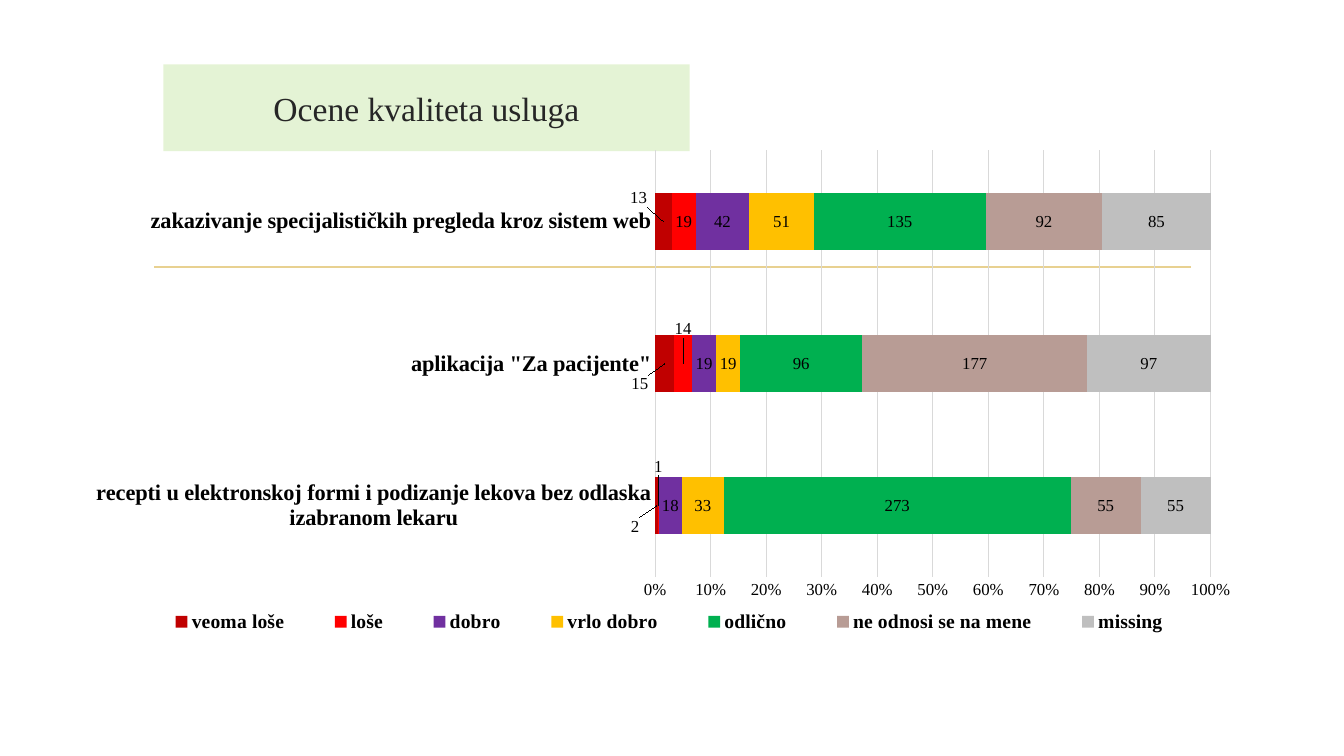
from lxml import etree
from pptx import Presentation
from pptx.chart.data import CategoryChartData
from pptx.dml.color import RGBColor
from pptx.enum.chart import XL_CHART_TYPE, XL_LABEL_POSITION, XL_LEGEND_POSITION, XL_TICK_MARK
from pptx.enum.shapes import MSO_CONNECTOR, MSO_SHAPE
from pptx.enum.text import MSO_ANCHOR, PP_ALIGN
from pptx.oxml.ns import qn
from pptx.util import Inches, Pt

FONT = "Times New Roman"
BLACK, GRID = "000000", "D9D9D9"
WIDTH, HEIGHT = 13.33, 7.5

CATEGORIES = [
    "recepti u elektronskoj formi i podizanje lekova bez odlaska izabranom lekaru",
    'aplikacija "Za pacijente"',
    "zakazivanje specijalističkih pregleda kroz sistem web",
]
RATINGS = [
    ("veoma loše", (2, 15, 13), "C00000"),
    ("loše", (1, 14, 19), "FF0000"),
    ("dobro", (18, 19, 42), "7030A0"),
    ("vrlo dobro", (33, 19, 51), "FFC000"),
    ("odlično", (273, 96, 135), "00B050"),
    ("ne odnosi se na mene", (55, 177, 92), "B89C95"),
    ("missing", (55, 97, 85), "BFBFBF"),
]
# Labels moved off narrow bars: (rating, category) -> shift as shares of the chart
LABEL_SHIFTS = {
    (0, 0): (-0.018, 0.04), (0, 1): (-0.021, 0.04), (0, 2): (-0.021, -0.046),
    (1, 0): (0, -0.077), (1, 1): (0, -0.068),
}


def color(value):
    return RGBColor.from_string(value)


def set_font(font, size, value=BLACK, bold=False):
    formats = {"name": FONT, "size": Pt(size), "bold": bold}
    for name, setting in formats.items():
        setattr(font, name, setting)
    font.color.rgb = color(value)


def set_line(line, value, width):
    line.color.rgb = color(value)
    line.width = Pt(width)


def add_layout(parent, index, **settings):
    """Place a chart part by hand, in shares of the chart's size."""
    for old in parent.findall(qn("c:layout")):
        parent.remove(old)
    layout = etree.Element(qn("c:layout"))
    manual = etree.SubElement(layout, qn("c:manualLayout"))
    for name, value in settings.items():
        etree.SubElement(manual, qn(f"c:{name}")).set("val", str(value))
    parent.insert(index, layout)


def add_divider(slide, left, right, top):
    line = slide.shapes.add_connector(
        MSO_CONNECTOR.STRAIGHT, Inches(left), Inches(top), Inches(right), Inches(top))
    set_line(line.line, "E8D191", 1.25)
    etree.SubElement(line._element.spPr, qn("a:effectLst"))


def add_title(slide, text, *box):
    shape = slide.shapes.add_shape(MSO_SHAPE.RECTANGLE, *map(Inches, box))
    shape.shadow.inherit = False
    shape.line.fill.background()
    shape.fill.solid()
    shape.fill.fore_color.rgb = color("92D050")
    tint = shape._element.spPr.find(qn("a:solidFill"))[0]
    etree.SubElement(tint, qn("a:alpha")).set("val", "24000")
    shape.text_frame.vertical_anchor = MSO_ANCHOR.MIDDLE
    paragraph = shape.text_frame.paragraphs[0]
    paragraph.text = text
    paragraph.alignment = PP_ALIGN.CENTER
    set_font(paragraph.font, 24, "262626")


def format_axes(chart):
    category_axis, value_axis = chart.category_axis, chart.value_axis
    for axis, size, bold in ((category_axis, 16, True), (value_axis, 12, False)):
        axis.major_tick_mark = axis.minor_tick_mark = XL_TICK_MARK.NONE
        set_font(axis.tick_labels.font, size, bold=bold)
    set_line(category_axis.format.line, GRID, 0.75)
    category_axis.has_major_gridlines = False
    value_axis.format.line.fill.background()
    value_axis.has_major_gridlines = True
    set_line(value_axis.major_gridlines.format.line, GRID, 0.75)
    value_axis.minimum_scale, value_axis.maximum_scale = 0, 1
    value_axis.major_unit = 0.1
    value_axis.tick_labels.number_format = "0%"
    value_axis.tick_labels.number_format_is_linked = False


def format_series(series, fill):
    series.format.fill.solid()
    series.format.fill.fore_color.rgb = color(fill)
    labels = series.data_labels
    labels.show_value = True
    labels.position = XL_LABEL_POSITION.CENTER
    set_font(labels.font, 12)


def shift_label(series, category, shift):
    label = series.points[category].data_label
    set_font(label.font, 12)
    label.position = XL_LABEL_POSITION.CENTER
    element = next(item for item in series._element.iter(qn("c:dLbl"))
                   if item.find(qn("c:idx")).get("val") == str(category))
    add_layout(element, 1, x=shift[0], y=shift[1])


def add_ratings_chart(slide, *box):
    data = CategoryChartData()
    data.categories = CATEGORIES
    for name, values, _ in RATINGS:
        data.add_series(name, values)
    chart = slide.shapes.add_chart(
        XL_CHART_TYPE.BAR_STACKED_100, *map(Inches, box), data).chart
    chart.has_title = False
    set_font(chart.font, 10)
    format_axes(chart)

    plot = chart.plots[0]
    plot.gap_width, plot.overlap, plot.vary_by_categories = 150, 100, False
    for series, (_, _, fill) in zip(plot.series, RATINGS):
        format_series(series, fill)
    for (rating, category), shift in LABEL_SHIFTS.items():
        shift_label(plot.series[rating], category, shift)

    # Legend and plot area
    chart.has_legend = True
    legend = chart.legend
    legend.position = XL_LEGEND_POSITION.BOTTOM
    legend.include_in_layout = False
    set_font(legend.font, 14, bold=True)
    add_layout(legend._element, 1, xMode="edge", yMode="edge",
               x=0.05, y=0.91, w=0.91, h=0.08)
    add_layout(chart._chartSpace.chart.plotArea, 0, layoutTarget="inner",
               xMode="edge", yMode="edge", x=0.493, y=0.02, w=0.47, h=0.842)


def main():
    presentation = Presentation()
    presentation.slide_width, presentation.slide_height = Inches(WIDTH), Inches(HEIGHT)
    slide = presentation.slides.add_slide(presentation.slide_layouts[6])
    add_divider(slide, 1.53, 11.81, 2.65)
    add_title(slide, "Ocene kvaliteta usluga", 1.62, 0.64, 5.22, 0.86)
    add_ratings_chart(slide, 0.72, 1.39, 11.72, 5.03)
    presentation.save("out.pptx")


if __name__ == "__main__":
    main()
